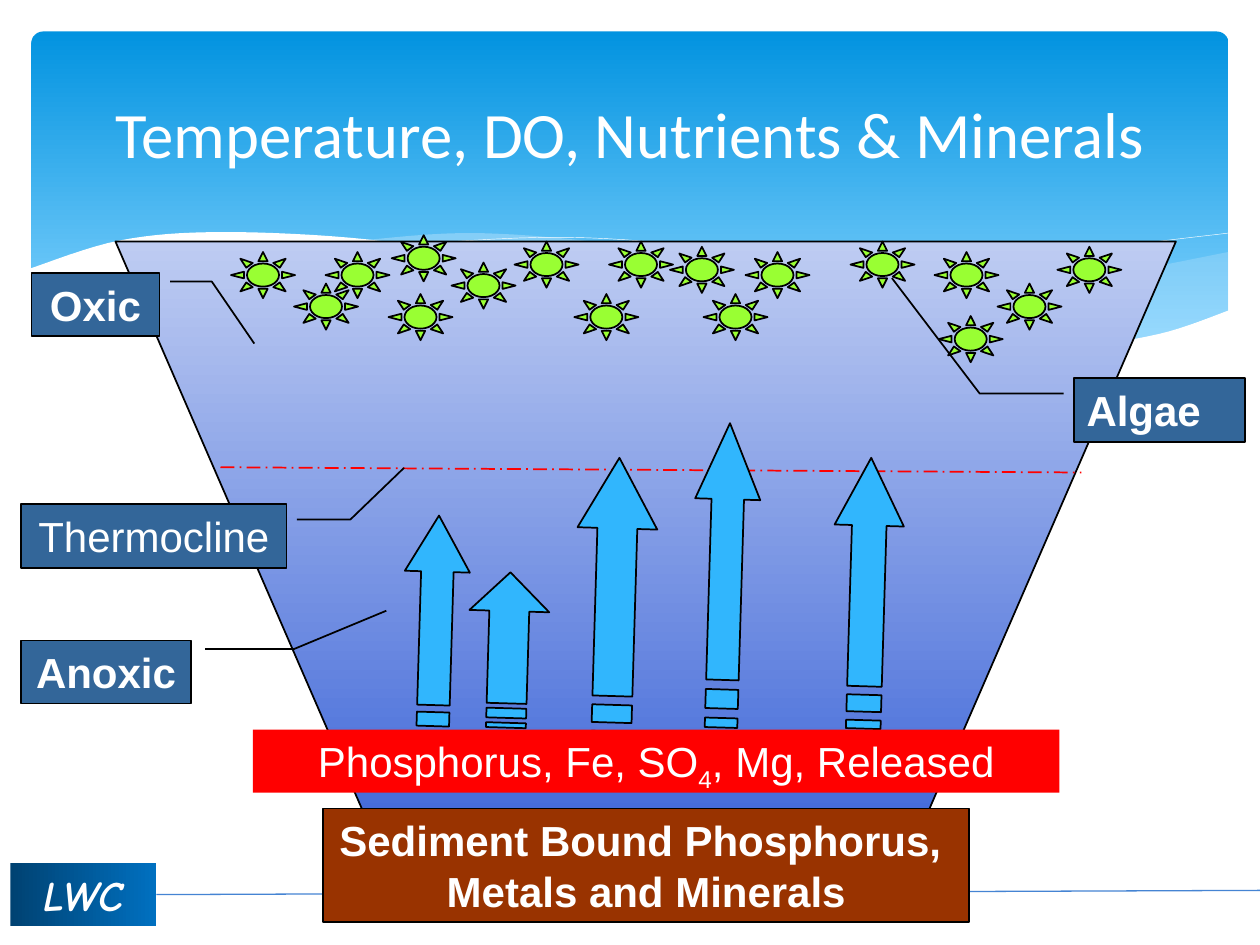
import pptx
import pptx.util
import pptx.dml.color
import pptx.enum.dml
import pptx.enum.shapes
import pptx.enum.text
import pptx.oxml
import pptx.oxml.ns
import lxml.etree

theme = {
    "sky": ("0293E0", "83D3FE", 270, 0.9), "lake": ("BECCF2", "3E66D8", 270, 1),
    "badge": ("004272", "0070C0", 0, 1), "wave": "C6E7FC", "white": "FFFFFF",
    "ink": "000000", "rule": "4584D3", "red": "FF0000", "flow": "31B6FD",
    "label": "336699", "mud": "993300", "algae": "99FF33",
    "head": 37, "text": 24, "sans": "Arial", "title": "Calibri", "hand": "Comic Neue",
}
rgb = pptx.dml.color.RGBColor.from_string
kind = pptx.enum.shapes.MSO_SHAPE
place = pptx.enum.text.PP_ALIGN
hold = pptx.enum.text.MSO_ANCHOR
fit = pptx.enum.text.MSO_AUTO_SIZE

deck = pptx.Presentation()
deck.slide_width = pptx.util.Inches(10)
deck.slide_height = pptx.util.Inches(7.5)
cols = 120
unit = deck.slide_width // cols
slide = deck.slides.add_slide(deck.slide_layouts[5])
shapes = slide.shapes


def dress(shape, fill=None, line=None, width=1, clear=None):
    shape.shadow.inherit = False
    if fill is None:
        shape.fill.background()
    elif isinstance(fill, tuple):
        start, end, angle, reach = fill
        shape.fill.gradient()
        shape.fill.gradient_angle = angle
        for stop, tone, spot in zip(shape.fill.gradient_stops, (start, end), (0, reach)):
            stop.color.rgb = rgb(tone)
            stop.position = spot
    else:
        shape.fill.solid()
        shape.fill.fore_color.rgb = rgb(fill)
    if clear:
        tone = shape.element.spPr.xpath("./a:solidFill/a:srgbClr")[0]
        alpha = lxml.etree.SubElement(tone, pptx.oxml.ns.qn("a:alpha"))
        alpha.set("val", str(clear * 1000))
    if line:
        shape.line.color.rgb = rgb(line)
        shape.line.width = pptx.util.Pt(width)
    else:
        shape.line.fill.background()
    return shape


def trace(*loops, shut=True):
    pen = None
    for loop in loops:
        spots = [(x * unit, y * unit) for x, y in loop]
        if pen is None:
            pen = shapes.build_freeform(*spots[0])
        else:
            pen.move_to(*spots[0])
        pen.add_line_segments(spots[1:], close=shut)
    return pen.convert_to_shape()


band = shapes.add_shape(kind.ROUNDED_RECTANGLE, 3 * unit, 3 * unit, 114 * unit, int(32.4 * unit))
band.adjustments[0] = 0.034
dress(band, theme["sky"])

knots = {
    "near top": [(117, 24), (103.3, 26.8), (90.4, 29.8), (79.3, 31.8)],
    "near low": [(79.3, 31.8), (89.4, 33), (97.7, 33.4), (107.6, 32.6), (117, 29.6)],
    "far top": [(34.3, 22.9), (45.6, 22.2), (60.2, 23.5), (75.5, 26.6), (93, 30.5), (107.2, 32.8)],
    "far low": [(107.2, 32.8), (91.3, 33.2), (76.1, 31.3), (53.9, 26.6), (34.3, 22.9)],
    "left crest": [(37.1, 23.4), (54, 22.6), (69.8, 24), (91.2, 28), (108.8, 32.6)],
    "right crest": [(73.6, 30.8), (89.8, 26.8), (103.9, 23.9), (117, 22.2)],
    "foam": [(2.8, 25.6), (11.4, 22.9), (21.2, 22.1), (35, 22.8), (46.9, 24.8), (60.4, 28),
             (77.8, 31.4), (91.3, 33), (102, 33), (110.4, 31.8), (117.2, 29.5)],
}
steps = 8
curves = {}
for name, marks in knots.items():
    chain = [marks[0], *marks, marks[-1]]
    curve = [marks[0]]
    for prev, start, end, after in zip(chain, chain[1:], chain[2:], chain[3:]):
        for step in range(1, steps + 1):
            t = step / steps
            curve.append(tuple(
                b + t * (c - a) / 2 + t ** 2 * (2 * a - 5 * b + 4 * c - d) / 2
                + t ** 3 * (3 * b - a - 3 * c + d) / 2
                for a, b, c, d in zip(prev, start, end, after)))
    curves[name] = curve

for wave, clear in (("near", 29), ("far", 40)):
    dress(trace(curves[wave + " top"] + curves[wave + " low"]), theme["wave"], clear=clear)
for side in ("left", "right"):
    dress(trace(curves[side + " crest"], shut=False), None, theme["white"], 0.25)
floor = 39.5
dress(trace(curves["foam"] + [(117.2, floor), (2.8, floor)]), theme["white"])

title = shapes.title
title.left, title.top, title.width, title.height = (int(n * unit) for n in (6, 4.4, 108, 16.4))
title.element.getparent().append(title.element)

shore, bed = 23, 81
lake = [(11, shore), (36.2, bed), (86.8, bed), (112, shore)]
dress(trace(lake), theme["lake"], theme["ink"])

rules = [((14.9, 85.2, cols, 84.8), "rule", 0.75, None),
         ((21, 44.5, 103, 45), "red", 1, pptx.enum.dml.MSO_LINE.LONG_DASH_DOT)]
for ends, tone, width, dash in rules:
    rule = shapes.add_connector(pptx.enum.shapes.MSO_CONNECTOR.STRAIGHT, *(int(n * unit) for n in ends))
    rule.line.color.rgb = rgb(theme[tone])
    rule.line.width = pptx.util.Pt(width)
    if dash:
        rule.line.dash_style = dash
    lxml.etree.SubElement(rule.element.spPr, pptx.oxml.ns.qn("a:effectLst"))

flows = [(44.6, 54.5, 7.6, 14.8), (54.8, 43.6, 7.6, 26.9), (79.3, 43.6, 6.6, 25.8),
         (38.4, 49.1, 6.2, 21.4), (66, 40.3, 6.2, 29)]
for x, y, wide, tall in flows:
    left, right, base = x + wide / 4, x + wide * 3 / 4, y + tall
    neck, tail = y + tall / 4, base - tall * 5 / 32
    arrow = [(x, neck), (left, neck), (left, tail), (right, tail), (right, neck),
             (x + wide, neck), (x + wide / 2, y)]
    bars = [[(left, base - tall * top), (right, base - tall * top),
             (right, base - tall * low), (left, base - tall * low)]
            for low, top in ((1 / 16, 1 / 8), (0, 1 / 32))]
    flow = dress(trace(arrow, *bars), theme["flow"], theme["ink"])
    flow.rotation = 1.7

blooms = {30.1: [89.4], 28: [37, 54.7, 67], 27: [28, 95], 25: [43], 24: [22, 31, 71, 89],
          23.5: [63.8, 100.7], 23: [49, 58, 81], 22.4: [37.3]}
for y, row in blooms.items():
    for x in row:
        sun = shapes.add_shape(kind.SUN, int(x * unit), int(y * unit), int(6.1 * unit), int(4.4 * unit))
        dress(sun, theme["algae"], theme["ink"])

texts = [(title, [["Temperature, DO, Nutrients & Minerals"]], "title", False)]

labels = [
    ("Anoxic", (2, 61, 16.2, 6), 0.137, (1.082, 1.605, 2.148), -0.473, True),
    ("Oxic", (3, 26, 12.2, 6), 0.137, (1.082, 1.408, 1.74), 1.122, True),
    ("Algae", (102.3, 36, 16.3, 6.1), 0.243, (-0.061, -0.552, -1.065), -1.561, True),
    ("Thermocline", (2, 48, 25.3, 6.1), 0.243, (1.039, 1.24, 1.442), -0.564, False),
]
for word, area, level, (start, elbow, end), tip, bold in labels:
    label = shapes.add_shape(kind.LINE_CALLOUT_2, *(int(n * unit) for n in area))
    for spot, bend in enumerate((level, start, level, elbow, tip, end)):
        label.adjustments[spot] = bend
    dress(label, theme["label"], theme["ink"])
    texts.append((label, [[word]], "sans", bold))

slabs = [
    ((1, 82.2, 13.9, 6), "badge", None, [["LWC"]], "hand", True),
    ((24.1, 69.5, 76.8, 6), "red", None, [["Phosphorus, Fe, SO", "4", ", Mg, Released"]], "sans", False),
    ((30.8, 77, 61.5, 10.8), "mud", theme["ink"],
     [["Sediment Bound Phosphorus, "], ["Metals and Minerals"]], "sans", True),
]
for area, fill, line, lines, face, bold in slabs:
    slab = shapes.add_shape(kind.RECTANGLE, *(int(n * unit) for n in area))
    dress(slab, theme[fill], line)
    texts.append((slab, lines, face, bold))

for box, lines, face, bold in texts:
    frame = box.text_frame
    lone = len(lines) == 1
    frame.word_wrap = lone
    frame.auto_size = fit.SHAPE_TO_FIT_TEXT if lone and box is not title else fit.NONE
    frame.vertical_anchor = hold.MIDDLE if box is title or not lone else hold.TOP
    for spot, parts in enumerate(lines):
        para = frame.add_paragraph() if spot else frame.paragraphs[0]
        para.alignment = place.LEFT if parts == ["Algae"] else place.CENTER
        for part in parts:
            run = para.add_run()
            run.text = part
            run.font.name = theme[face]
            run.font.size = pptx.util.Pt(theme["head" if box is title else "text"])
            run.font.bold = bold
            run.font.italic = face == "hand"
            run.font.color.rgb = rgb(theme["white"])
            if part == "4":
                run.font._element.set("baseline", "-25000")

deck.save("out.pptx")
